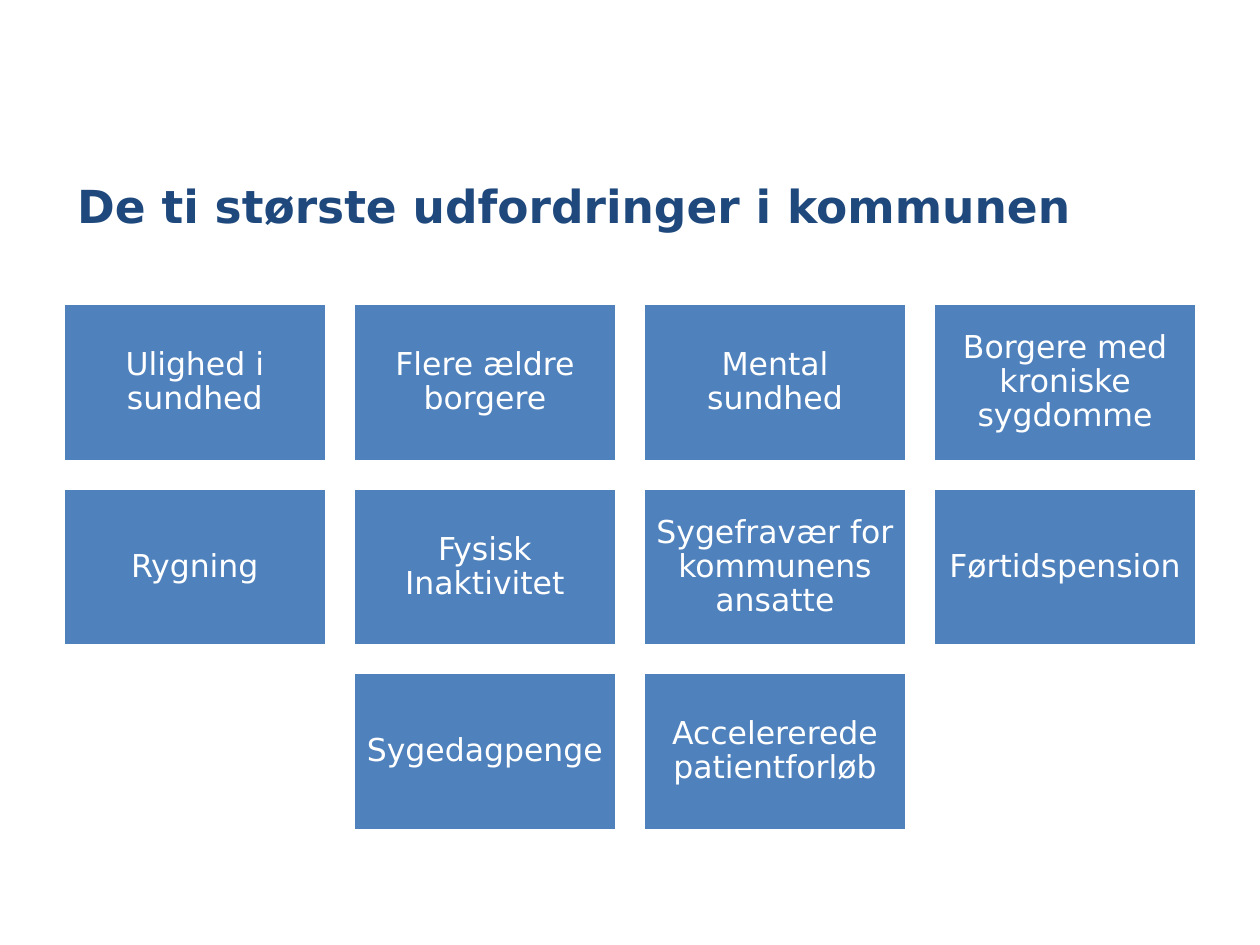
from pptx import Presentation
from pptx.dml.color import RGBColor
from pptx.enum.shapes import MSO_SHAPE
from pptx.enum.text import MSO_ANCHOR, PP_ALIGN
from pptx.util import Pt

RECT = MSO_SHAPE.RECTANGLE
MIDDLE = MSO_ANCHOR.MIDDLE
CENTER = PP_ALIGN.CENTER

NAVY = RGBColor(0x1F, 0x49, 0x7D)
BLUE = RGBColor(0x4F, 0x81, 0xBD)
WHITE = RGBColor(0xFF, 0xFF, 0xFF)

FACE = "DejaVu Sans"
TITLE = "De ti største udfordringer i kommunen"
ITEMS = [
    "Ulighed i sundhed", "Flere ældre borgere",
    "Mental sundhed", "Borgere med kroniske sygdomme",
    "Rygning", "Fysisk Inaktivitet",
    "Sygefravær for kommunens ansatte", "Førtidspension",
    "Sygedagpenge", "Accelererede patientforløb",
]
COLS = 4
INSET = Pt(5)
FRAME = {"word_wrap": True, "vertical_anchor": MIDDLE}
PAD = {"margin_left": INSET, "margin_right": INSET,
       "margin_top": INSET, "margin_bottom": INSET}
HEAD = {"name": FACE, "size": Pt(26), "bold": True}
LABEL = {"name": FACE, "size": Pt(18)}


def style(item, values):
    for name, value in values.items():
        setattr(item, name, value)


def write(shape, text, frame, font, color):
    style(shape.text_frame, frame)
    para = shape.text_frame.paragraphs[0]
    para.text = text
    style(para.font, font)
    para.font.color.rgb = color
    return para


def add_title(slide, left, top, width, height):
    box = slide.shapes.add_textbox(Pt(left), Pt(top), Pt(width), Pt(height))
    write(box, TITLE, FRAME, HEAD, NAVY)


def add_tile(slide, text, left, top, width, height):
    tile = slide.shapes.add_shape(RECT, Pt(left), Pt(top), Pt(width), Pt(height))
    tile.shadow.inherit = False
    tile.fill.solid()
    tile.fill.fore_color.rgb = BLUE
    tile.line.color.rgb = WHITE
    tile.line.width = Pt(2)
    para = write(tile, text, FRAME | PAD, LABEL, WHITE)
    style(para, {"alignment": CENTER, "line_spacing": 0.9})


def add_grid(slide, left, top, width):
    wide = width / (COLS + 0.1 * (COLS - 1))
    high = 0.6 * wide
    gap = 0.1 * wide
    for start in range(0, len(ITEMS), COLS):
        row = ITEMS[start:start + COLS]
        shift = (COLS - len(row)) / 2
        y = top + start // COLS * (high + gap)
        for col, text in enumerate(row):
            x = left + (col + shift) * (wide + gap)
            add_tile(slide, text, x, y, wide, high)


def main():
    deck = Presentation()
    style(deck, {"slide_width": Pt(720), "slide_height": Pt(540)})
    slide = deck.slides.add_slide(deck.slide_layouts[6])
    add_title(slide, 37, 89.5, 652, 56)
    add_grid(slide, 36, 173.4, 648)
    deck.save("out.pptx")


if __name__ == "__main__":
    main()
